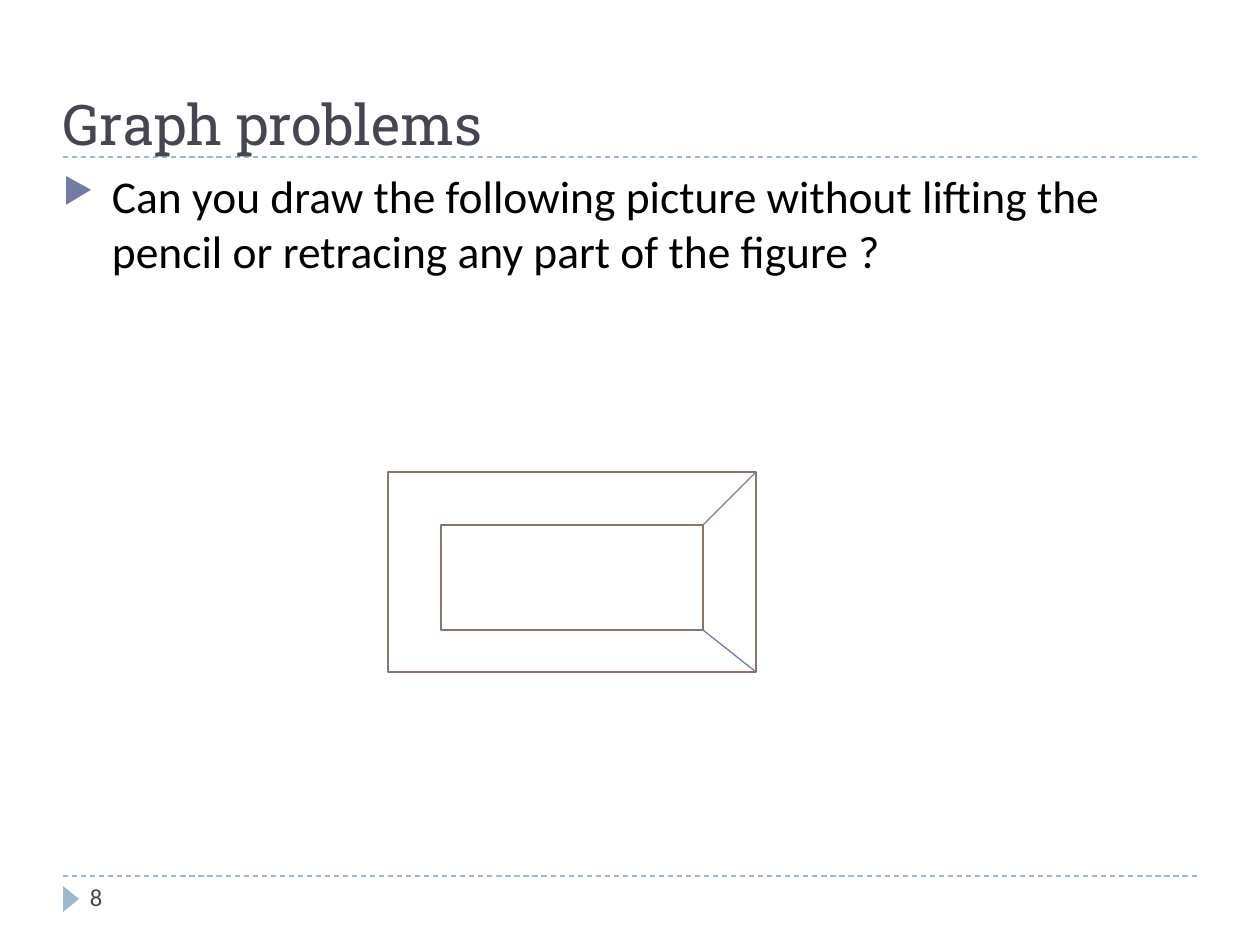
from lxml import etree
from pptx import Presentation
from pptx.dml.color import RGBColor
from pptx.enum.dml import MSO_LINE
from pptx.enum.shapes import MSO_CONNECTOR, MSO_SHAPE
from pptx.enum.text import MSO_ANCHOR
from pptx.oxml.ns import qn
from pptx.util import Pt

STRAIGHT = MSO_CONNECTOR.STRAIGHT
RECTANGLE, TRIANGLE = MSO_SHAPE.RECTANGLE, MSO_SHAPE.ISOSCELES_TRIANGLE
TOP, BOTTOM = MSO_ANCHOR.TOP, MSO_ANCHOR.BOTTOM
DASH = MSO_LINE.DASH

# Content
TITLE = "Graph problems"
QUESTION = ("Can you draw the following picture without lifting the pencil "
            "or retracing any part of the figure ?")
PAGE_NUMBER = "8"

# Layout in px, 126 to the inch
PAGE_SIZE = (1260, 945)
MARGIN = 63
CONTENT_WIDTH = PAGE_SIZE[0] - 2 * MARGIN
RULES = [876, 157]
MARKER = (58, 891, 26, 16)
OUTER = (388, 472, 368, 200)
INNER = (441, 525, 262, 105)

INK, SLATE, PALE = "464653", "727CA3", "9FB8CD"
BROWN, WHITE, BLACK = "8E736A", "FFFFFF", "000000"


def px(value):
    return round(value * 914400 / 126)


def color(value):
    return RGBColor.from_string(value)


def add_text(page, text, at, size, font="Calibri", ink=INK, anchor=TOP,
             inset=0, bullet=None, indent=0, before=0):
    box = page.shapes.add_textbox(*map(px, at))
    frame = box.text_frame
    frame.word_wrap = True
    frame.vertical_anchor = anchor
    frame.margin_left = frame.margin_right = px(inset)
    frame.margin_top = frame.margin_bottom = px(inset)
    para = frame.paragraphs[0]
    para.space_before = Pt(before)
    span = para.add_run()
    span.text = text
    span.font.size, span.font.name = Pt(size), font
    span.font.color.rgb = color(ink)
    if bullet:
        props = para._p.get_or_add_pPr()
        props.set("marL", str(px(indent)))
        props.set("indent", str(-px(indent)))
        bullet_color = etree.SubElement(props, qn("a:buClr"))
        etree.SubElement(bullet_color, qn("a:srgbClr"), val=SLATE)
        etree.SubElement(props, qn("a:buSzPct"), val="76000")
        etree.SubElement(props, qn("a:buChar"), char=bullet)


def add_line(page, start, end, ink, dash=None):
    line = page.shapes.add_connector(STRAIGHT, *map(px, start + end))
    line.line.color.rgb = color(ink)
    line.line.width = Pt(0.75)
    if dash:
        line.line.dash_style = dash
    etree.SubElement(line._element.spPr, qn("a:effectLst"))


def add_shape(page, kind, at, fill, outline=None, rotation=0):
    shape = page.shapes.add_shape(kind, *map(px, at))
    shape.shadow.inherit = False
    shape.rotation = rotation
    shape.fill.solid()
    shape.fill.fore_color.rgb = color(fill)
    if outline:
        shape.line.color.rgb = color(outline)
        shape.line.width = Pt(1.5)
    else:
        shape.line.fill.background()


def right_corners(at):
    left, top, width, height = at
    return [(left + width, top), (left + width, top + height)]


def main():
    deck = Presentation()
    deck.slide_width, deck.slide_height = map(px, PAGE_SIZE)
    page = deck.slides.add_slide(deck.slide_layouts[6])

    # Rules and footer marker
    for y in RULES:
        add_line(page, (MARGIN, y), (MARGIN + CONTENT_WIDTH, y), PALE, DASH)
    add_shape(page, TRIANGLE, MARKER, PALE, rotation=90)

    # Title, page number and question
    add_text(page, TITLE, (MARGIN, 21, CONTENT_WIDTH, 136), 32,
             font="Roboto Slab", anchor=BOTTOM)
    add_text(page, PAGE_NUMBER, (84, 876, 273, 43), 14, inset=6)
    add_text(page, QUESTION, (MARGIN, 168, CONTENT_WIDTH, 680), 26,
             ink=BLACK, bullet="▶", indent=49, before=6)

    # Nested rectangles joined at their right corners
    for at in (OUTER, INNER):
        add_shape(page, RECTANGLE, at, WHITE, BROWN)
    for start, end in zip(right_corners(INNER), right_corners(OUTER)):
        add_line(page, start, end, SLATE)

    deck.save("out.pptx")


if __name__ == "__main__":
    main()
